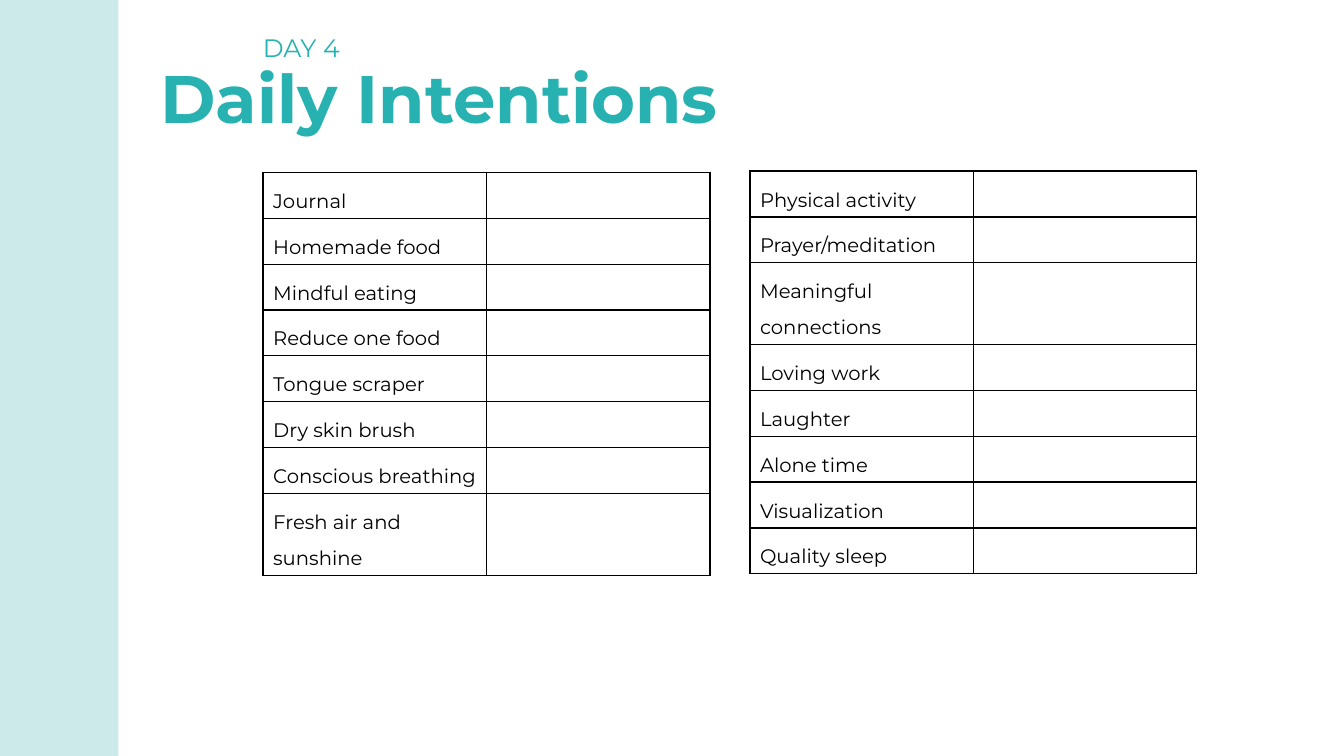
from dataclasses import dataclass

from lxml import etree
from pptx import Presentation
from pptx.dml.color import RGBColor
from pptx.enum.shapes import MSO_SHAPE
from pptx.enum.text import MSO_ANCHOR, MSO_AUTO_SIZE
from pptx.oxml.ns import qn
from pptx.slide import Slide
from pptx.table import _Cell
from pptx.text.text import _Paragraph
from pptx.util import Pt

RECTANGLE = MSO_SHAPE.RECTANGLE
MIDDLE = MSO_ANCHOR.MIDDLE
GROW_TO_TEXT = MSO_AUTO_SIZE.SHAPE_TO_FIT_TEXT

TEAL = RGBColor(0x27, 0xB2, 0xB1)
PALE_TEAL = RGBColor(0xCC, 0xEA, 0xEA)
BLACK = RGBColor(0x00, 0x00, 0x00)

FONT_NAME = "Montserrat"
SLIDE_WIDTH, SLIDE_HEIGHT = 960, 540
SIDEBAR_WIDTH = 84.5
COLUMN_WIDTH = 159.6
ROW_HEIGHT = 29.5
TALL_ROW_HEIGHT = 55.8
BORDER_WIDTH = 1
BORDER_TAGS = ("a:lnL", "a:lnR", "a:lnT", "a:lnB")

TITLE_FORMAT = {"name": FONT_NAME, "size": Pt(48), "bold": True}
DAY_FORMAT = {"name": FONT_NAME, "size": Pt(18), "bold": False}
HABIT_FORMAT = {"name": FONT_NAME, "size": Pt(14), "bold": False}


@dataclass(frozen=True)
class Heading:
    text: str
    left: float
    top: float
    width: float
    height: float
    text_format: dict


@dataclass(frozen=True)
class Checklist:
    left: float
    top: float
    habits: tuple[str, ...]
    tall_habit: str


HEADINGS = (
    Heading("Daily Intentions", 107.3, 36.7, 479.5, 65.5, TITLE_FORMAT),
    Heading("DAY 4", 180.7, 19.4, 153.4, 28.8, DAY_FORMAT),
)

CHECKLISTS = (
    Checklist(
        187.9,
        123.1,
        (
            "Journal",
            "Homemade food",
            "Mindful eating",
            "Reduce one food",
            "Tongue scraper",
            "Dry skin brush",
            "Conscious breathing",
            "Fresh air and sunshine",
        ),
        "Fresh air and sunshine",
    ),
    Checklist(
        535.7,
        122.2,
        (
            "Physical activity",
            "Prayer/meditation",
            "Meaningful connections",
            "Loving work",
            "Laughter",
            "Alone time",
            "Visualization",
            "Quality sleep",
        ),
        "Meaningful connections",
    ),
)


def write_text(paragraph: _Paragraph, text: str, text_format: dict, color: RGBColor) -> None:
    run = paragraph.add_run()
    run.text = text
    for attribute, value in text_format.items():
        setattr(run.font, attribute, value)
    run.font.color.rgb = color


def style_cell(cell: _Cell) -> None:
    properties = cell._tc.get_or_add_tcPr()
    for tag in BORDER_TAGS:
        line = etree.SubElement(properties, qn(tag), w=str(Pt(BORDER_WIDTH)))
        fill = etree.SubElement(line, qn("a:solidFill"))
        etree.SubElement(fill, qn("a:srgbClr"), val=str(BLACK))
    cell.fill.background()
    cell.vertical_anchor = MIDDLE


def add_checklist(slide: Slide, checklist: Checklist) -> None:
    heights = [
        TALL_ROW_HEIGHT if habit == checklist.tall_habit else ROW_HEIGHT
        for habit in checklist.habits
    ]
    table = slide.shapes.add_table(
        len(heights),
        2,
        Pt(checklist.left),
        Pt(checklist.top),
        Pt(2 * COLUMN_WIDTH),
        Pt(sum(heights)),
    ).table
    table.first_row = False
    table.horz_banding = False
    for column in table.columns:
        column.width = Pt(COLUMN_WIDTH)
    for row, height, habit in zip(table.rows, heights, checklist.habits):
        row.height = Pt(height)
        for cell in row.cells:
            style_cell(cell)
        paragraph = row.cells[0].text_frame.paragraphs[0]
        paragraph.line_spacing = 1.5
        write_text(paragraph, habit, HABIT_FORMAT, BLACK)


def add_heading(slide: Slide, heading: Heading) -> None:
    text_box = slide.shapes.add_textbox(
        Pt(heading.left), Pt(heading.top), Pt(heading.width), Pt(heading.height)
    )
    text_frame = text_box.text_frame
    text_frame.word_wrap = True
    text_frame.auto_size = GROW_TO_TEXT
    write_text(text_frame.paragraphs[0], heading.text, heading.text_format, TEAL)


def add_sidebar(slide: Slide) -> None:
    sidebar = slide.shapes.add_shape(RECTANGLE, 0, 0, Pt(SIDEBAR_WIDTH), Pt(SLIDE_HEIGHT))
    sidebar.shadow.inherit = False
    sidebar.fill.solid()
    sidebar.fill.fore_color.rgb = PALE_TEAL
    sidebar.line.fill.background()


def main() -> None:
    presentation = Presentation()
    presentation.slide_width = Pt(SLIDE_WIDTH)
    presentation.slide_height = Pt(SLIDE_HEIGHT)
    slide = presentation.slides.add_slide(presentation.slide_layouts[6])
    for checklist in CHECKLISTS:
        add_checklist(slide, checklist)
    for heading in HEADINGS:
        add_heading(slide, heading)
    add_sidebar(slide)
    presentation.save("out.pptx")


if __name__ == "__main__":
    main()
